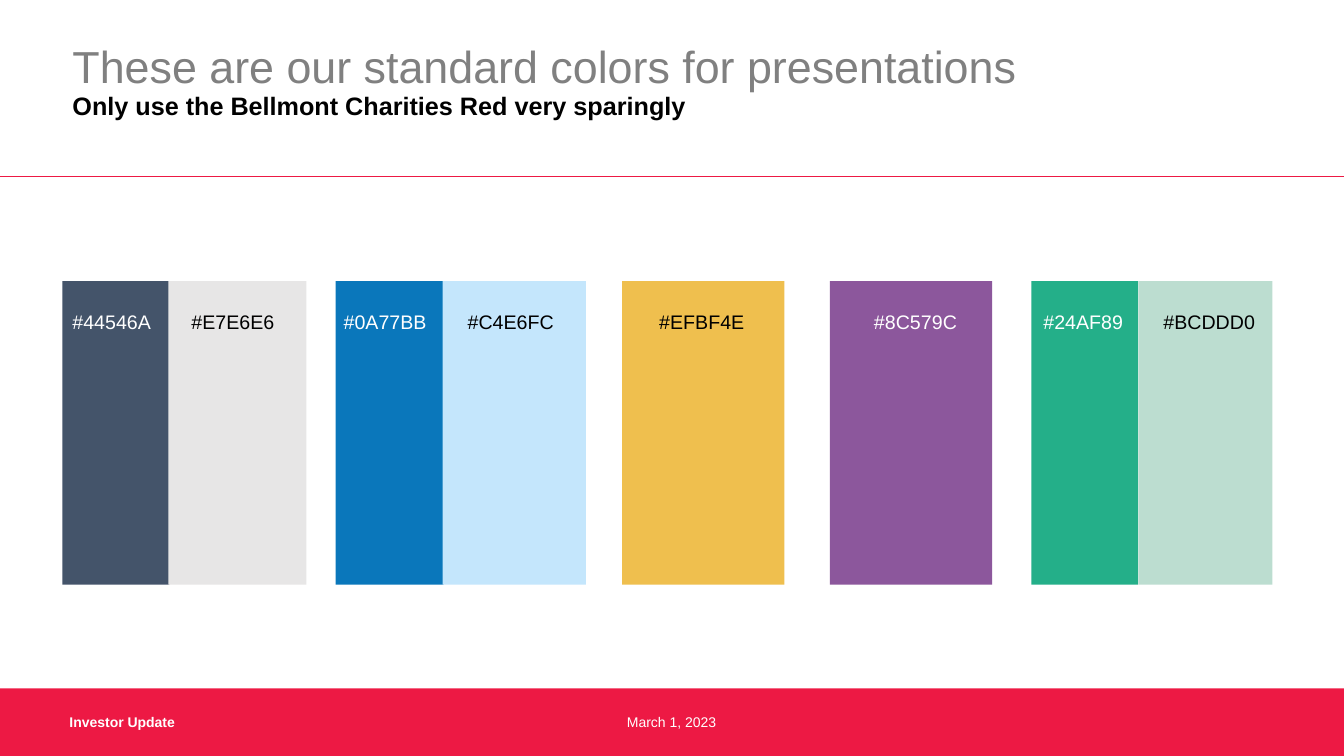
import dataclasses

import pptx
import pptx.dml.color
import pptx.enum.shapes
import pptx.enum.text
import pptx.oxml
import pptx.oxml.ns
import pptx.shapes.autoshape
import pptx.slide
import pptx.util

RGBColor = pptx.dml.color.RGBColor
ALIGN = pptx.enum.text.PP_ALIGN
ANCHOR = pptx.enum.text.MSO_ANCHOR

RED = RGBColor(0xED, 0x19, 0x44)
WHITE = RGBColor(0xFF, 0xFF, 0xFF)
BLACK = RGBColor(0x00, 0x00, 0x00)
GRAY = RGBColor(0x80, 0x80, 0x80)
SLATE = RGBColor(0x44, 0x54, 0x6A)
SILVER = RGBColor(0xE7, 0xE6, 0xE6)
BLUE = RGBColor(0x0A, 0x77, 0xBB)
SKY = RGBColor(0xC4, 0xE6, 0xFC)
GOLD = RGBColor(0xEF, 0xBF, 0x4E)
PURPLE = RGBColor(0x8C, 0x57, 0x9C)
GREEN = RGBColor(0x24, 0xAF, 0x89)
MINT = RGBColor(0xBC, 0xDD, 0xD0)

EMU_PER_PX = 9144  # 100 px to the inch
PAGE_WIDTH, PAGE_HEIGHT = 1333, 750
SWATCH_TOP, SWATCH_HEIGHT = 279, 301
LABEL_TOP, LABEL_WIDTH, LABEL_HEIGHT = 303, 117, 34
FOOTER_TOP, RULE_TOP = 683, 175


@dataclasses.dataclass(frozen=True)
class Swatch:
    left: int
    width: int
    label_left: int
    color: RGBColor
    ink: RGBColor


@dataclasses.dataclass(frozen=True)
class Line:
    text: str
    size: int
    color: RGBColor
    bold: bool = False


@dataclasses.dataclass(frozen=True)
class TextArea:
    left: int
    top: int
    width: int
    height: int
    lines: tuple[Line, ...]
    frame_format: dict = dataclasses.field(default_factory=dict)
    para_format: dict = dataclasses.field(default_factory=dict)


SWATCHES = (
    Swatch(62, 106, 62, SLATE, WHITE),
    Swatch(167, 137, 180, SILVER, BLACK),
    Swatch(333, 107, 331, BLUE, WHITE),
    Swatch(439, 142, 454, SKY, BLACK),
    Swatch(617, 161, 644, GOLD, BLACK),
    Swatch(823, 161, 857, PURPLE, WHITE),
    Swatch(1023, 106, 1025, GREEN, WHITE),
    Swatch(1129, 133, 1144, MINT, BLACK),
)

FOOTER_FRAME = {"vertical_anchor": ANCHOR.MIDDLE, "margin_top": 0, "margin_bottom": 0}

TEXT_AREAS = (
    TextArea(
        62, 40, 1212, 86,
        (
            Line("These are our standard colors for presentations", 32, GRAY),
            Line("Only use the Bellmont Charities Red very sparingly", 18, BLACK, True),
        ),
        para_format={"line_spacing": 0.9, "space_after": pptx.util.Pt(12)},
    ),
    TextArea(59, 708, 272, 17, (Line("Investor Update", 10, WHITE, True),), FOOTER_FRAME),
    TextArea(
        530, 708, 272, 17,
        (Line("March 1, 2023", 10, WHITE),),
        FOOTER_FRAME | {"margin_left": 0, "margin_right": 0},
        {"alignment": ALIGN.CENTER},
    ),
)


def px(length: int) -> pptx.util.Emu:
    return pptx.util.Emu(length * EMU_PER_PX)


def apply_format(target: object, values: dict) -> None:
    for name, value in values.items():
        setattr(target, name, value)


def draw_block(
    page: pptx.slide.Slide, left: int, top: int, width: int, height: int, color: RGBColor
) -> pptx.shapes.autoshape.Shape:
    block = page.shapes.add_shape(
        pptx.enum.shapes.MSO_SHAPE.RECTANGLE, px(left), px(top), px(width), px(height)
    )
    block.shadow.inherit = False
    block.fill.solid()
    block.fill.fore_color.rgb = color
    block.line.fill.background()
    return block


def draw_text(page: pptx.slide.Slide, area: TextArea) -> None:
    box = page.shapes.add_textbox(px(area.left), px(area.top), px(area.width), px(area.height))
    apply_format(box.text_frame, {"word_wrap": True} | area.frame_format)
    para = box.text_frame.paragraphs[0]
    apply_format(para, area.para_format)
    for index, line in enumerate(area.lines):
        if index:
            para.add_line_break()
        span = para.add_run()
        span.text = line.text
        apply_format(
            span.font,
            {"name": "Arial", "size": pptx.util.Pt(line.size), "bold": line.bold},
        )
        span.font.color.rgb = line.color


def draw_rule(page: pptx.slide.Slide) -> None:
    rule = page.shapes.add_connector(
        pptx.enum.shapes.MSO_CONNECTOR.STRAIGHT, 0, px(RULE_TOP), px(PAGE_WIDTH), px(RULE_TOP)
    )
    rule.line.color.rgb = RED
    rule.line.width = pptx.util.Pt(0.5)
    properties = rule.element.find(pptx.oxml.ns.qn("p:spPr"))
    properties.append(
        pptx.oxml.parse_xml(f"<a:effectLst {pptx.oxml.ns.nsdecls('a')}/>")
    )


def draw_label(page: pptx.slide.Slide, swatch: Swatch) -> None:
    lines = (Line(f"#{swatch.color}", 14, swatch.ink),)
    draw_text(
        page,
        TextArea(
            swatch.label_left, LABEL_TOP, LABEL_WIDTH, LABEL_HEIGHT, lines, {"margin_right": 0}
        ),
    )


def main() -> None:
    deck = pptx.Presentation()
    deck.slide_width, deck.slide_height = px(PAGE_WIDTH), px(PAGE_HEIGHT)
    page = deck.slides.add_slide(deck.slide_layouts[6])

    # Footer band and header rule
    draw_block(page, 0, FOOTER_TOP, PAGE_WIDTH, PAGE_HEIGHT - FOOTER_TOP, RED)
    draw_rule(page)

    # Title and footer text
    for area in TEXT_AREAS:
        draw_text(page, area)

    # Palette, each swatch labelled with its own hex value
    for swatch in SWATCHES:
        draw_block(page, swatch.left, SWATCH_TOP, swatch.width, SWATCH_HEIGHT, swatch.color)
    for swatch in SWATCHES:
        draw_label(page, swatch)

    deck.save("out.pptx")


if __name__ == "__main__":
    main()
